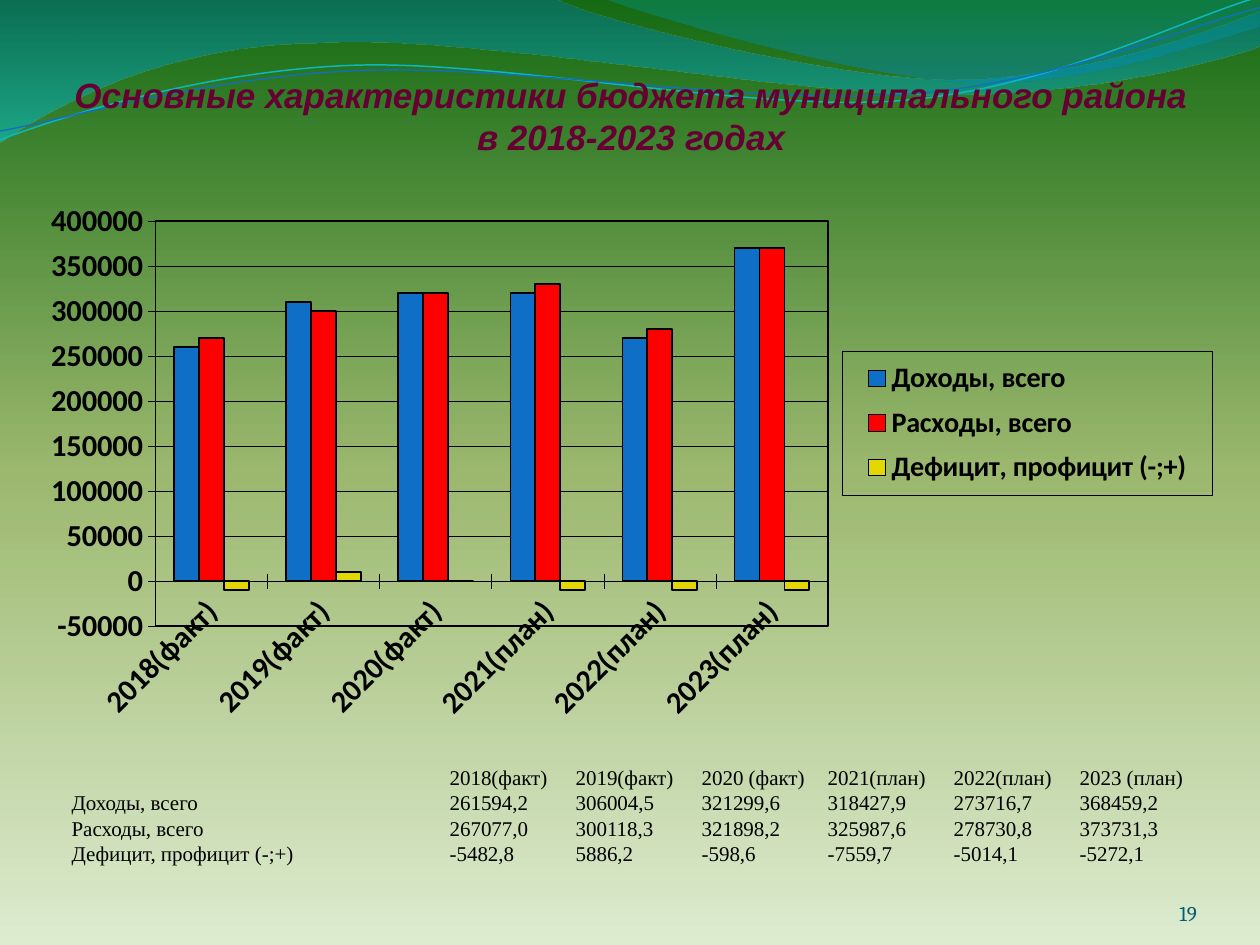
import math

import pptx
import pptx.chart.data
import pptx.dml.color
import pptx.enum.chart
import pptx.enum.text
import pptx.oxml
import pptx.oxml.ns
import pptx.util
from lxml import etree
from pptx.oxml.ns import qn
from pptx.util import Inches

COLORS = {
    "title": "660033", "text": "000000", "number": "045D75",
    "income": "0F6FC6", "expense": "FF0000", "balance": "E2D700",
    "cyan": "0AB8BF", "blue": "0F6FC6",
    "sky_light": "DDEBCF", "sky_middle": "9CB86E", "sky_dark": "156B13",
    "wave_blue": "0074A1", "wave_aqua": "00C6CF",
    "crest_teal": "00A1A9", "crest_blue": "008BBF",
}
CATEGORIES = ["2018(факт)", "2019(факт)", "2020(факт)",
              "2021(план)", "2022(план)", "2023(план)"]
# Series name, colour, values in thousands
SERIES = [
    ("Доходы, всего", "income", [260, 310, 320, 320, 270, 370]),
    ("Расходы, всего", "expense", [270, 300, 320, 330, 280, 370]),
    ("Дефицит, профицит (-;+)", "balance", [-10, 10, 0, -10, -10, -10]),
]
FIGURES = [
    ["", "2018(факт)", "2019(факт)", "2020 (факт)", "2021(план)", "2022(план)", "2023 (план)"],
    ["Доходы, всего", "261594,2", "306004,5", "321299,6", "318427,9", "273716,7", "368459,2"],
    ["Расходы, всего", "267077,0", "300118,3", "321898,2", "325987,6", "278730,8", "373731,3"],
    ["Дефицит, профицит (-;+)", "-5482,8", "5886,2", "-598,6", "-7559,7", "-5014,1", "-5272,1"],
]

# Each wave: start point, then cubic segments (6 numbers) or lines (2 numbers)
WIDE_WAVE = [(0, -0.01), (4.4, -0.01), (4.76, 0.17, 6.64, 0.63, 7.58, 0.63),
             (8.53, 0.63, 9.58, 0.26, 10, 0.09), (10.01, 0.36),
             (9.83, 0.44, 8.7, 0.76, 7.46, 0.75),
             (6.22, 0.75, 3.82, 0.28, 2.57, 0.34),
             (1.29, 0.35, 0.46, 0.83, -0.01, 1.13)]
CREST_WAVE = [(4.79, -0.01), (5.09, 0.11, 6.82, 0.62, 7.69, 0.65),
              (8.56, 0.69, 9.61, 0.32, 10, 0.21), (10, 0)]
CYAN_LINE = [(0, 1.11), (0.48, 0.93, 1.58, 0.57, 2.77, 0.52),
             (3.95, 0.47, 5.93, 0.89, 7.13, 0.8),
             (8.33, 0.71, 9.38, 0.15, 9.98, -0.02)]
BLUE_LINE = [(0, 1.04), (0.47, 0.96, 1.64, 0.61, 2.83, 0.56),
             (4.03, 0.51, 5.97, 0.83, 7.17, 0.75),
             (8.36, 0.67, 9.41, 0.21, 10, 0.06)]
LINE_TILT = -2.7


def rgb(name):
    return pptx.dml.color.RGBColor.from_string(COLORS[name])


def set_gradient(fill, element, stops, angle):
    """Fill with (position %, colour, opacity %) stops; angle is clockwise."""
    fill.gradient()
    gradient = element.find(".//" + qn("a:gradFill"))
    stop_list = gradient.find(qn("a:gsLst"))
    for stop in list(stop_list):
        stop_list.remove(stop)
    for position, color, opacity in stops:
        stop = etree.SubElement(stop_list, qn("a:gs"), pos=str(position * 1000))
        value = etree.SubElement(stop, qn("a:srgbClr"), val=COLORS[color])
        if opacity < 100:
            etree.SubElement(value, qn("a:alpha"), val=str(opacity * 1000))
    gradient.find(qn("a:lin")).set("ang", str(angle * 60000))


def style_font(font, name, size, color, bold=False, italic=False):
    font.name = name
    font.size = pptx.util.Pt(size)
    font.bold = bold
    font.italic = italic
    font.color.rgb = rgb(color)


def add_curve(slide, box, outline, close, tilt=0):
    """Draw the outline as true curves in a box turned by tilt degrees."""
    left, top, width, height = box
    cosine, sine = math.cos(math.radians(-tilt)), math.sin(math.radians(-tilt))

    def local(x, y):
        across, down = x - left - width / 2, y - top - height / 2
        return (Inches(across * cosine - down * sine + width / 2),
                Inches(across * sine + down * cosine + height / 2))

    corners = [local(*segment[-2:]) for segment in outline]
    builder = slide.shapes.build_freeform(*corners[0])
    builder.add_line_segments(corners[1:], close=close)
    shape = builder.convert_to_shape()
    shape.shadow.inherit = False
    shape.left, shape.top, shape.width, shape.height = map(Inches, box)
    shape.rotation = tilt

    outline_path = shape.element.find(".//" + qn("a:path"))
    outline_path.set("w", str(Inches(width)))
    outline_path.set("h", str(Inches(height)))
    for step, segment in zip(list(outline_path), outline):
        for point in list(step):
            step.remove(point)
        if len(segment) == 6:
            step_curve = etree.SubElement(outline_path, qn("a:cubicBezTo"))
            outline_path.replace(step, step_curve)
            step = step_curve
        for x, y in zip(segment[::2], segment[1::2]):
            x, y = local(x, y)
            etree.SubElement(step, qn("a:pt"), x=str(x), y=str(y))
    return shape


def add_background(slide):
    set_gradient(slide.background.fill, slide.element,
                 [(0, "sky_light", 100), (50, "sky_middle", 100), (100, "sky_dark", 100)], 270)
    for box, outline, stops in (
            ((-0.01, -0.01, 10.02, 1.14), WIDE_WAVE, [(0, "wave_blue", 45), (100, "wave_aqua", 55)]),
            ((4.79, -0.01, 5.21, 0.7), CREST_WAVE, [(0, "crest_teal", 30), (80, "crest_blue", 45)])):
        wave = add_curve(slide, box, outline, True)
        set_gradient(wave.fill, wave.element, stops, 90)
        wave.line.fill.background()
    for box, outline, color, width in (
            ((-0.02, 0.22, 10.02, 0.71), CYAN_LINE, "cyan", 0.85),
            ((-0.02, 0.3, 10.03, 0.58), BLUE_LINE, "blue", 0.75)):
        curve = add_curve(slide, box, outline, False, LINE_TILT)
        curve.fill.background()
        curve.line.color.rgb = rgb(color)
        curve.line.width = pptx.util.Pt(width)


def prepare_frame(shape, insets, anchor):
    frame = shape.text_frame
    frame.word_wrap = True
    frame.vertical_anchor = anchor
    frame.margin_left, frame.margin_top, frame.margin_right, frame.margin_bottom = map(
        Inches, insets)
    return frame


def place_title(slide, left, top, width, height):
    title = slide.shapes.title
    title.left, title.top, title.width, title.height = left, top, width, height
    title.element.getparent().append(title.element)  # in front of the waves
    frame = prepare_frame(title, (0, 0.05, 0, 0), pptx.enum.text.MSO_ANCHOR.BOTTOM)
    frame.auto_size = pptx.enum.text.MSO_AUTO_SIZE.NONE
    paragraph = frame.paragraphs[0]
    paragraph.alignment = pptx.enum.text.PP_ALIGN.CENTER
    run = paragraph.add_run()
    run.text = "Основные характеристики бюджета муниципального района в 2018-2023 годах"
    style_font(run.font, "Arial", 20, "title", bold=True, italic=True)


def layout_xml(x, y, width, height, inner=False):
    target = '<c:layoutTarget val="inner"/>' if inner else ""
    return pptx.oxml.parse_xml(
        f'<c:layout {pptx.oxml.ns.nsdecls("c")}><c:manualLayout>{target}'
        '<c:xMode val="edge"/><c:yMode val="edge"/>'
        f'<c:x val="{x}"/><c:y val="{y}"/><c:w val="{width}"/><c:h val="{height}"/>'
        '</c:manualLayout></c:layout>')


def border_xml(points):
    return pptx.oxml.parse_xml(
        f'<c:spPr {pptx.oxml.ns.nsdecls("c", "a")}><a:noFill/>'
        f'<a:ln w="{pptx.util.Pt(points)}"><a:solidFill><a:srgbClr val="{COLORS["text"]}"/>'
        '</a:solidFill></a:ln></c:spPr>')


def add_budget_chart(slide, left, top, width, height):
    data = pptx.chart.data.CategoryChartData()
    data.categories = CATEGORIES
    for name, _, thousands in SERIES:
        data.add_series(name, [value * 1000 for value in thousands])
    chart = slide.shapes.add_chart(pptx.enum.chart.XL_CHART_TYPE.COLUMN_CLUSTERED,
                                   left, top, width, height, data).chart
    chart.has_title = False
    style_font(chart.font, "Calibri", 17.4, "text", bold=True)

    # Bars
    plot = chart.plots[0]
    plot.vary_by_categories = False
    plot.gap_width, plot.overlap = 150, 0
    for series, (_, color, _) in zip(plot.series, SERIES):
        series.invert_if_negative = False
        series.format.fill.solid()
        series.format.fill.fore_color.rgb = rgb(color)
        series.format.line.color.rgb = rgb("text")
        series.format.line.width = pptx.util.Pt(1)

    # Axes
    value_axis, category_axis = chart.value_axis, chart.category_axis
    value_axis.minimum_scale, value_axis.maximum_scale = -50000, 400000
    value_axis.major_unit = 50000
    value_axis.has_major_gridlines = True
    for axis in (value_axis, category_axis):
        axis.major_tick_mark = pptx.enum.chart.XL_TICK_MARK.CROSS
        style_font(axis.tick_labels.font, "Calibri", 17.4, "text", bold=True)
    for line in (value_axis.format.line, category_axis.format.line,
                 value_axis.major_gridlines.format.line):
        line.color.rgb = rgb("text")
        line.width = pptx.util.Pt(0.25)
    body = category_axis._element.find(".//" + qn("a:bodyPr"))
    body.set("rot", str(-45 * 60000))
    body.set("vert", "horz")

    # Plot area and legend frames
    area = chart._chartSpace.chart.plotArea
    for layout in area.findall(qn("c:layout")):
        area.remove(layout)
    area.insert(0, layout_xml(0.11, 0.08, 0.56, 0.71, inner=True))
    area.find(qn("c:layout")).getparent().replace(
        area[0], layout_xml(0.113, 0.076, 0.562, 0.71, inner=True))
    area.append(border_xml(1))
    chart.has_legend = True
    legend = chart.legend
    legend.position = pptx.enum.chart.XL_LEGEND_POSITION.RIGHT
    legend.include_in_layout = False
    style_font(legend.font, "Calibri", 16.1, "text", bold=True)
    element = legend._element
    for layout in element.findall(qn("c:layout")):
        element.remove(layout)
    element.find(qn("c:legendPos")).addnext(layout_xml(0.687, 0.304, 0.309, 0.252))
    element.find(qn("c:txPr")).addprevious(border_xml(0.25))


def add_figures(slide, left, top, width, height):
    box = slide.shapes.add_textbox(left, top, width, height)
    frame = prepare_frame(box, (0.1, 0.05, 0.1, 0.05), pptx.enum.text.MSO_ANCHOR.TOP)
    for index, cells in enumerate(FIGURES):
        paragraph = frame.paragraphs[0] if index == 0 else frame.add_paragraph()
        tabs = etree.SubElement(paragraph._p.get_or_add_pPr(), qn("a:tabLst"))
        for column in range(len(CATEGORIES)):
            etree.SubElement(tabs, qn("a:tab"), pos=str(Inches(3 + column)), algn="l")
        run = paragraph.add_run()
        run.text = "\t".join(cells)
        style_font(run.font, "Times New Roman", 12, "text")


def add_slide_number(slide, left, top, width, height):
    box = slide.shapes.add_textbox(left, top, width, height)
    frame = prepare_frame(box, (0, 0, 0, 0), pptx.enum.text.MSO_ANCHOR.BOTTOM)
    paragraph = frame.paragraphs[0]
    paragraph.alignment = pptx.enum.text.PP_ALIGN.RIGHT
    run = paragraph.add_run()
    run.text = "19"
    style_font(run.font, "Cambria", 12, "number")


def main():
    presentation = pptx.Presentation()
    presentation.slide_width, presentation.slide_height = Inches(10), Inches(7.5)
    slide = presentation.slides.add_slide(presentation.slide_layouts[5])
    add_background(slide)
    place_title(slide, Inches(0.51), Inches(0), Inches(9), Inches(1.25))
    add_budget_chart(slide, Inches(0.16), Inches(1.41), Inches(9.5), Inches(4.53))
    add_slide_number(slide, Inches(8.67), Inches(6.95), Inches(0.83), Inches(0.4))
    add_figures(slide, Inches(0.47), Inches(6.02), Inches(9.3), Inches(1.11))
    presentation.save("out.pptx")


if __name__ == "__main__":
    main()
